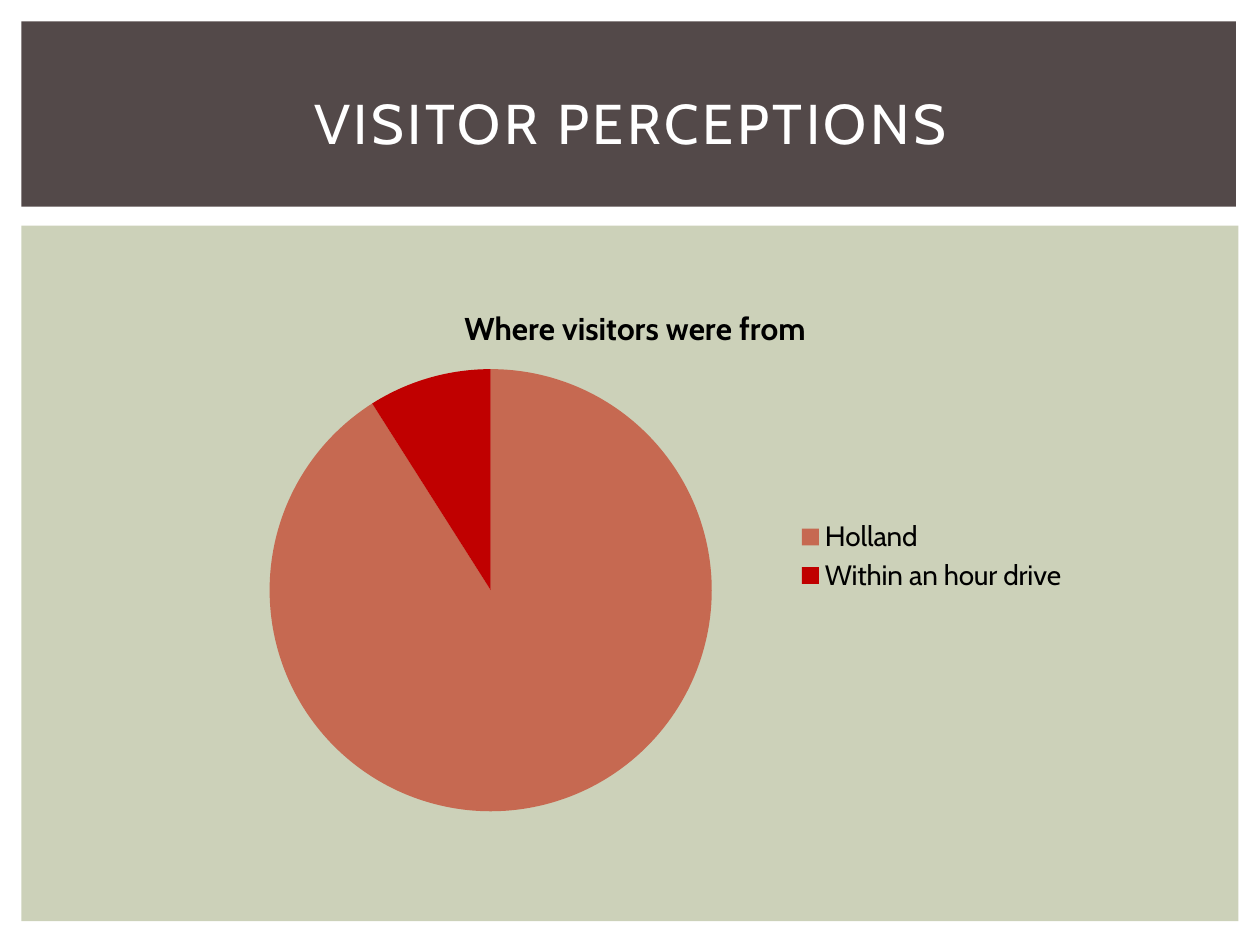
"""Build the visitor perceptions slide with its pie chart of visitor origins."""
from dataclasses import dataclass

import lxml.etree
import pptx
import pptx.chart.data
import pptx.dml.color
import pptx.enum.chart
import pptx.enum.shapes
import pptx.enum.text
import pptx.oxml.ns
import pptx.util
from pptx.util import Inches


@dataclass(frozen=True)
class Theme:
    font: str = "Cabin"
    band: str = "534949"
    panel: str = "CCD1B9"
    heading: str = "FFFFFF"
    text: str = "000000"
    heading_size: int = 32
    chart_title_size: int = 18
    legend_size: int = 16
    heading_spacing: int = 200


@dataclass(frozen=True)
class Box:
    left: float
    top: float
    width: float
    height: float

    def lengths(self) -> tuple:
        return tuple(map(Inches, (self.left, self.top, self.width, self.height)))


@dataclass(frozen=True)
class Backdrop:
    box: Box
    color: str


@dataclass(frozen=True)
class Origin:
    label: str
    share: int
    color: str


THEME = Theme()
BACKDROPS = (
    Backdrop(Box(0.17, 1.79, 9.66, 5.52), THEME.panel),
    Backdrop(Box(0.17, 0.17, 9.64, 1.47), THEME.band),
)
ORIGINS = (
    Origin("Holland", 91, "C66951"),
    Origin("Within an hour drive", 9, "C00000"),
)
HEADING_BOX = Box(0.42, 0.39, 9.17, 1.15)
CHART_BOX = Box(1.5, 2.25, 7.08, 4.33)
PIE_BOX = Box(2.14, 2.93, 3.51, 3.51)


def rgb(color: str) -> pptx.dml.color.RGBColor:
    return pptx.dml.color.RGBColor.from_string(color)


def style_font(font, size: int, color: str, bold: bool = False) -> None:
    font.name = THEME.font
    font.size = pptx.util.Pt(size)
    font.bold = bold
    font.color.rgb = rgb(color)


def draw_backdrop(slide, backdrop: Backdrop) -> None:
    panel = slide.shapes.add_shape(
        pptx.enum.shapes.MSO_SHAPE.RECTANGLE, *backdrop.box.lengths())
    panel.shadow.inherit = False
    panel.fill.solid()
    panel.fill.fore_color.rgb = rgb(backdrop.color)
    panel.line.fill.background()


def draw_heading(slide, text: str) -> None:
    heading = slide.shapes.title
    heading.left, heading.top, heading.width, heading.height = HEADING_BOX.lengths()
    frame = heading.text_frame
    frame.word_wrap = True
    frame.vertical_anchor = pptx.enum.text.MSO_ANCHOR.MIDDLE
    paragraph = frame.paragraphs[0]
    paragraph.alignment = pptx.enum.text.PP_ALIGN.CENTER
    run = paragraph.add_run()
    run.text = text
    style_font(run.font, THEME.heading_size, THEME.heading)
    run.font._element.set("spc", str(THEME.heading_spacing))
    tree = slide.shapes._spTree
    tree.remove(heading._element)
    tree.append(heading._element)


def place_pie(chart) -> None:
    qn = pptx.oxml.ns.qn
    plot_area = chart._chartSpace.chart.plotArea
    for automatic in plot_area.findall(qn("c:layout")):
        plot_area.remove(automatic)
    layout = lxml.etree.Element(qn("c:layout"))
    plot_area.insert(0, layout)
    manual = lxml.etree.SubElement(layout, qn("c:manualLayout"))
    settings = {
        "layoutTarget": "inner",
        "xMode": "edge",
        "yMode": "edge",
        "x": (PIE_BOX.left - CHART_BOX.left) / CHART_BOX.width,
        "y": (PIE_BOX.top - CHART_BOX.top) / CHART_BOX.height,
        "w": PIE_BOX.width / CHART_BOX.width,
        "h": PIE_BOX.height / CHART_BOX.height,
    }
    for tag, value in settings.items():
        lxml.etree.SubElement(manual, qn(f"c:{tag}")).set("val", str(value))


def draw_origins(slide, title: str, origins: tuple[Origin, ...]) -> None:
    shares = pptx.chart.data.CategoryChartData()
    shares.categories = [origin.label for origin in origins]
    shares.add_series("Series 1", [origin.share for origin in origins])
    chart = slide.shapes.add_chart(
        pptx.enum.chart.XL_CHART_TYPE.PIE, *CHART_BOX.lengths(), shares).chart
    style_font(chart.font, THEME.legend_size, THEME.text)

    chart.has_title = True
    run = chart.chart_title.text_frame.paragraphs[0].add_run()
    run.text = title
    style_font(run.font, THEME.chart_title_size, THEME.text, bold=True)
    chart.chart_title.include_in_layout = False

    chart.has_legend = True
    chart.legend.position = pptx.enum.chart.XL_LEGEND_POSITION.RIGHT
    chart.legend.include_in_layout = False
    style_font(chart.legend.font, THEME.legend_size, THEME.text)

    pie = chart.plots[0]
    pie.vary_by_categories = True
    for index, origin in enumerate(origins):
        wedge = pie.series[0].points[index].format
        wedge.fill.solid()
        wedge.fill.fore_color.rgb = rgb(origin.color)
        wedge.line.fill.background()
    place_pie(chart)


def main() -> None:
    deck = pptx.Presentation()
    deck.slide_width, deck.slide_height = Inches(10), Inches(7.5)
    slide = deck.slides.add_slide(deck.slide_layouts.get_by_name("Title Only"))
    for backdrop in BACKDROPS:
        draw_backdrop(slide, backdrop)
    draw_heading(slide, "VISITOR PERCEPTIONS")
    draw_origins(slide, "Where visitors were from", ORIGINS)
    deck.save("out.pptx")


if __name__ == "__main__":
    main()
